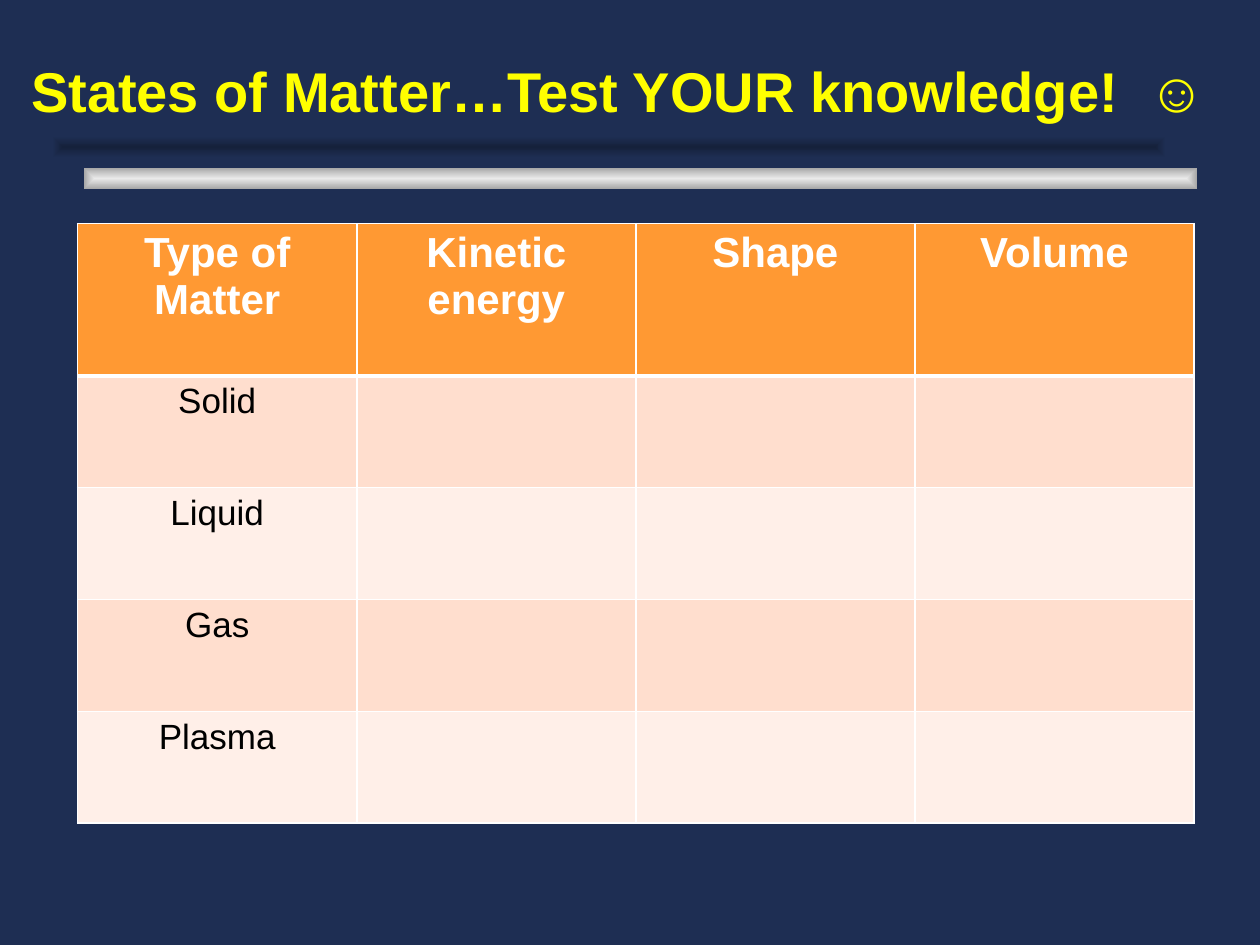
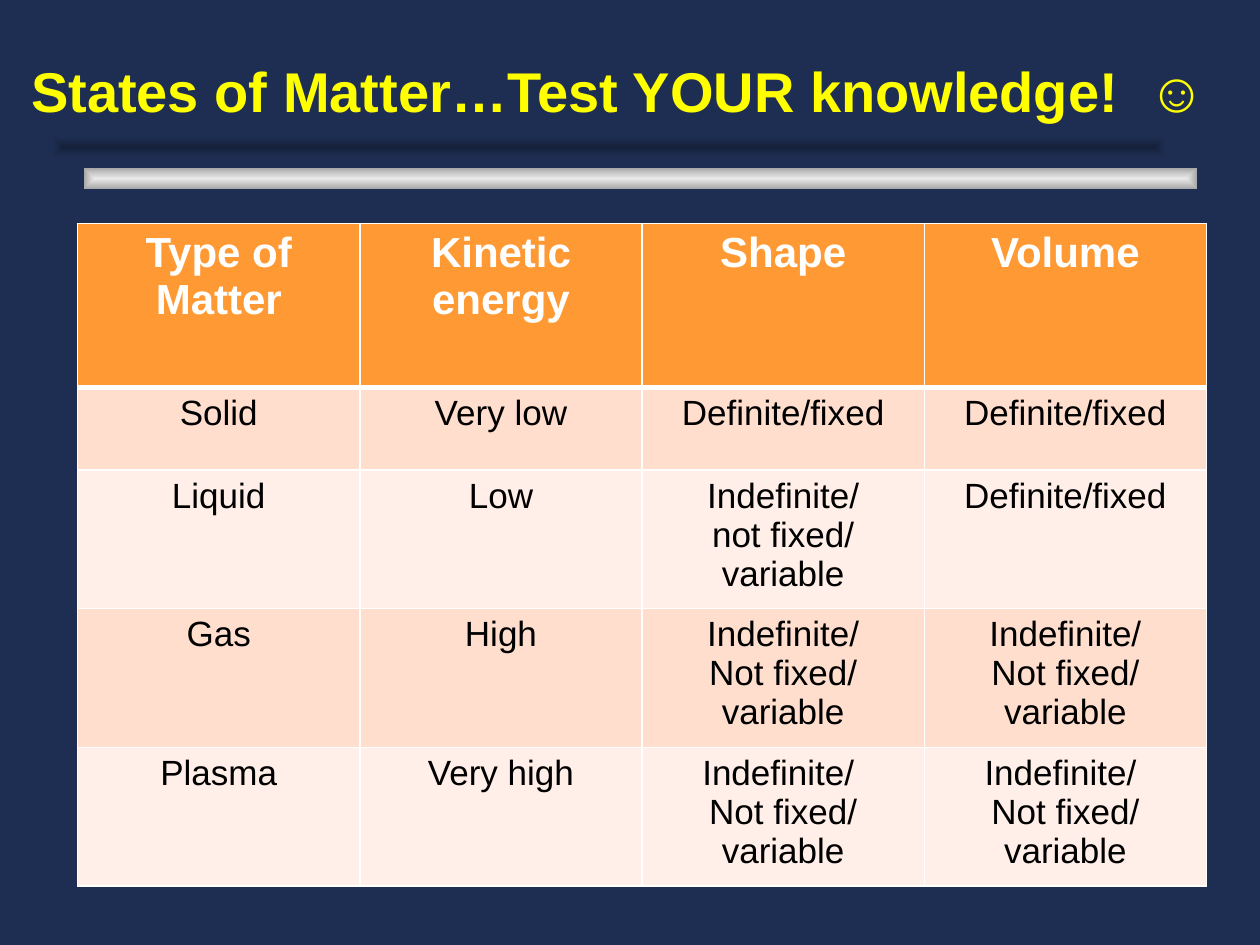
import pptx
import pptx.util
import pptx.dml.color
import pptx.enum.shapes
import pptx.enum.text
import pptx.oxml
import pptx.oxml.ns

deck = pptx.Presentation()
deck.slide_width = pptx.util.Inches(10)
deck.slide_height = pptx.util.Inches(7.5)
unit = deck.slide_width / 120  # grid of 120 columns by 90 rows

navy, white, black = "1E2E53", "FFFFFF", "000000"
yellow, orange = "FFFF00", "FF9933"
bands = ["FFEFE8", "FFDECE"]
title = "States of Matter…Test YOUR knowledge!  ☺"
heads = ["Type of Matter", "Kinetic energy", "Shape", "Volume"]
states = ["Solid", "Liquid", "Gas", "Plasma"]
fixed = "Definite/fixed"
loose = "Indefinite/\nNot fixed/\nvariable"
wide = "Indefinite/ \nNot fixed/\nvariable"

# Left, top, centre colour, edge colour
bars = [(8, 16, "EAEAEA", "A7A7A7"), (5, 13, "15213B", navy)]

# Column width, row heights, answers beside each state
quiz = (26.58, [14.5] + [10.65] * 4, [[""] * 3] * 4)
key = (26.88, [15.6, 7.87] + [13.2] * 3, [
    ["Very low", fixed, fixed],
    ["Low", "Indefinite/\nnot fixed/\nvariable", fixed],
    ["High", loose, loose],
    ["Very high", wide, wide],
])


def tint(code):
    return pptx.dml.color.RGBColor.from_string(code)


def write(frame, text, size=20, color=black, bold=False):
    frame.text = text
    for para in frame.paragraphs:
        para.alignment = pptx.enum.text.PP_ALIGN.CENTER
        para.font.name = "Arial"
        para.font.size = pptx.util.Pt(size)
        para.font.bold = bold
        para.font.color.rgb = tint(color)
        for run in para.runs:
            run.font.name = "Arial"
            run.font.size = pptx.util.Pt(size)
            run.font.bold = bold
            run.font.color.rgb = tint(color)


# Shared background
back = deck.slide_master.background.fill
back.solid()
back.fore_color.rgb = tint(navy)

for width, rows, answers in (quiz, key):
    slide = deck.slides.add_slide(deck.slide_layouts[5])

    # Bars under the title
    for left, top, core, edge in bars:
        box = [int(n * unit) for n in (left, top, 106, 2)]
        bar = slide.shapes.add_shape(pptx.enum.shapes.MSO_SHAPE.RECTANGLE, *box)
        bar.shadow.inherit = False
        bar.line.fill.background()
        bar.fill.gradient()
        for stop, code, place in zip(bar.fill.gradient_stops, (core, edge), (0, 1)):
            stop.color.rgb = tint(code)
            stop.position = place
        line = bar.element.spPr.find(".//" + pptx.oxml.ns.qn("a:lin"))
        line.getparent().replace(line, pptx.oxml.parse_xml(
            f'<a:path {pptx.oxml.ns.nsdecls("a")} path="shape">'
            '<a:fillToRect l="50000" t="50000" r="50000" b="50000"/></a:path>'))

    # Title
    head = slide.shapes.title
    head.left, head.top, head.width, head.height = [
        int(n * unit) for n in (0, 4.7, 118, 7.7)]
    head.text_frame.auto_size = pptx.enum.text.MSO_AUTO_SIZE.NONE
    head.text_frame.vertical_anchor = pptx.enum.text.MSO_ANCHOR.MIDDLE
    write(head.text_frame, title, size=32, color=yellow, bold=True)

    # Table
    cells = [heads] + [[name] + row for name, row in zip(states, answers)]
    box = [int(n * unit) for n in (7.4, 21.3, 4 * width, sum(rows))]
    grid = slide.shapes.add_table(len(rows), len(heads), *box).table
    for col in grid.columns:
        col.width = int(width * unit)
    for r, row in enumerate(cells):
        grid.rows[r].height = int(rows[r] * unit)
        for c, text in enumerate(row):
            cell = grid.cell(r, c)
            cell.fill.solid()
            cell.fill.fore_color.rgb = tint(bands[r % 2] if r else orange)
            if r == 0:
                write(cell.text_frame, text, size=24, color=white, bold=True)
            else:
                write(cell.text_frame, text)

            # White rules, thicker below the header
            thick = {"L": 1, "R": 1, "T": 3 if r == 1 else 1, "B": 1 if r else 3}
            props = cell._tc.get_or_add_tcPr()
            for i, (side, size) in enumerate(thick.items()):
                props.insert(i, pptx.oxml.parse_xml(
                    f'<a:ln{side} {pptx.oxml.ns.nsdecls("a")} w="{size * 12700}">'
                    f'<a:solidFill><a:srgbClr val="{white}"/></a:solidFill></a:ln{side}>'))

deck.save("out.pptx")
